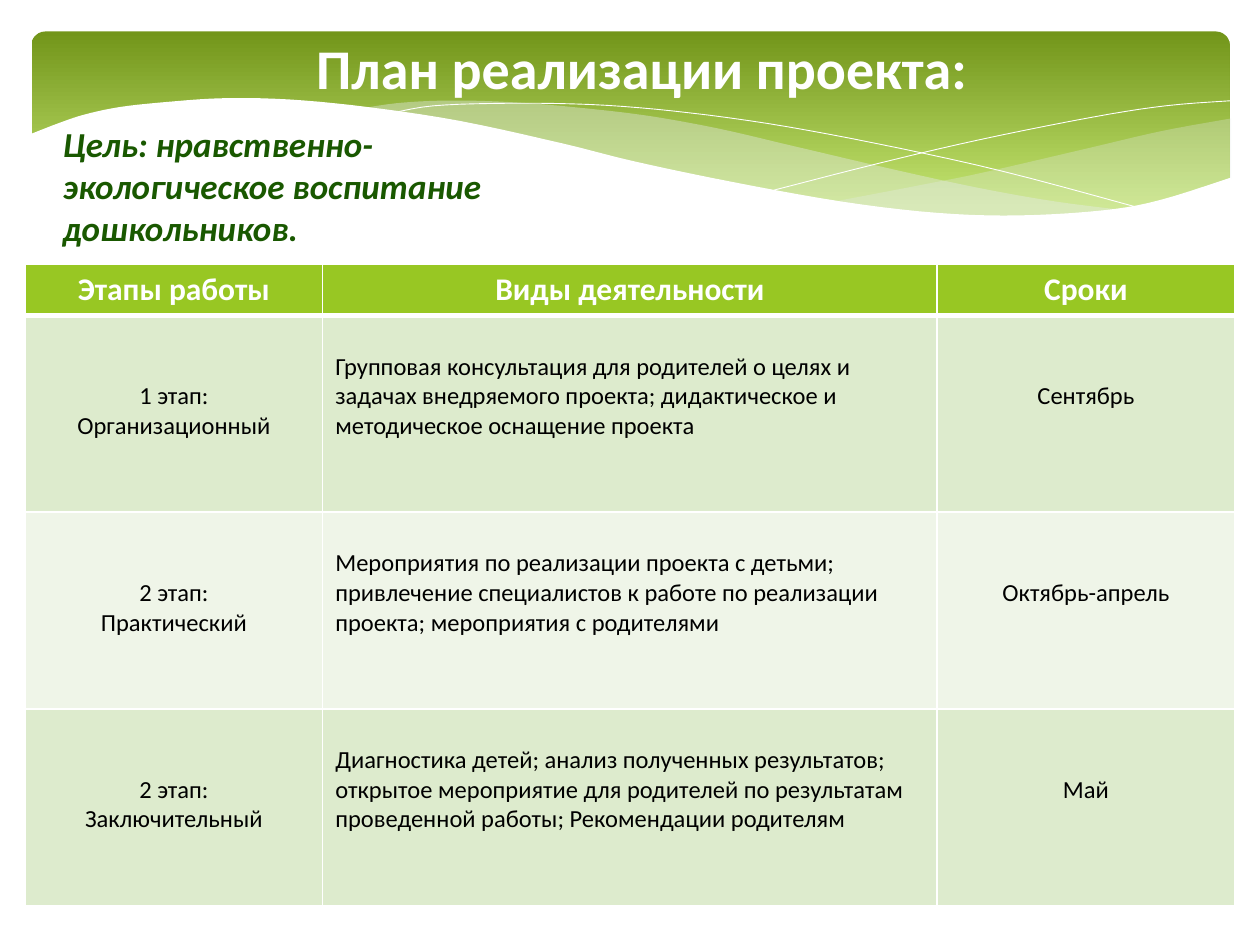
from dataclasses import dataclass

from lxml.etree import SubElement
from pptx import Presentation
from pptx.dml.color import RGBColor
from pptx.enum.shapes import MSO_SHAPE as Shape
from pptx.enum.text import MSO_ANCHOR as Anchor, PP_ALIGN as Align
from pptx.oxml.ns import qn
from pptx.util import Inches, Pt

FONT = "Calibri"
COLORS = {
    "white": "FFFFFF", "black": "000000", "goal": "195800",
    "band_top": "72951A", "band_low": "C5E672", "haze": "E7ECED",
    "header": "98C723", "odd": "DDEBCD", "even": "EFF5E8",
}
UNIT = Inches(0.1)  # the slide is a grid of 100 columns and 75 rows
BODY_LINE = 2.37    # grid rows taken by one line of 14 pt text

# Wave edges, as (column, row) knots inside the heading region
RIGHT_HAZE = [
    [(97.7, 9.4), (92.2, 10.4), (86.2, 11.8), (78, 13.7), (73, 14.7), (66.2, 16)],
    [(66.2, 16), (71.9, 16.7), (77, 17.1), (82.5, 17.2), (88.2, 16.8),
     (92.9, 15.8), (97.7, 14.2)],
]
LEFT_HAZE = [
    [(89.4, 16.7), (83.8, 16), (77.6, 14.9), (70.7, 13.4), (63, 11.6),
     (57, 10.2), (51.5, 9.2), (46.5, 8.6), (42, 8.2), (38, 8), (34.5, 8),
     (31.4, 8.2), (28.7, 8.6)],
    [(28.7, 8.6), (34.3, 9.4), (40.5, 10.6), (45, 11.6), (53, 13.5), (60.2, 15),
     (66.6, 16.1), (72.3, 16.8), (77.4, 17.2), (81.9, 17.3), (85.9, 17.1),
     (89.4, 16.7)],
]
WHITE_WAVE = [
    [(97.7, 14.1), (92, 15.9), (87.5, 16.7), (80.9, 17.1), (74.4, 16.9),
     (66.8, 16), (57.9, 14.4), (50.3, 12.8), (44.7, 11.4), (36.5, 9.6),
     (29.2, 8.5), (23, 7.9), (17.7, 7.8), (13.2, 8.1), (9.5, 8.5), (6.7, 9.1),
     (4.6, 9.8), (2.3, 10.7)],
    [(2.3, 22.4), (97.7, 22.4)],
]
FALLING_LINE = [(31, 9), (34.4, 8.4), (40.2, 8.2), (46.9, 8.3), (53.3, 8.8),
                (60.9, 9.8), (69.6, 11.4), (79.6, 13.6), (90.8, 16.6)]
RISING_LINE = [(61.4, 15.1), (69.6, 13), (77.7, 11.1), (86.7, 9.3),
               (92.5, 8.4), (97.6, 8)]

HEADER = ["Этапы работы", "Виды деятельности", "Сроки"]
STAGES = [
    ["1 этап:\nОрганизационный",
     "Групповая консультация для родителей о целях и задачах внедряемого проекта; "
     "дидактическое и методическое оснащение проекта", "Сентябрь"],
    ["2 этап:\nПрактический",
     "Мероприятия по реализации проекта с детьми; привлечение специалистов к работе "
     "по реализации проекта; мероприятия с родителями", "Октябрь-апрель"],
    ["2 этап:\nЗаключительный",
     "Диагностика детей; анализ полученных результатов; открытое мероприятие для "
     "родителей по результатам проведенной работы; Рекомендации родителям", "Май"],
]


@dataclass
class Box:
    """A region in grid columns and rows."""
    x: float
    y: float
    w: float
    h: float

    def inner(self, x, y, w, h):
        return Box(self.x + x, self.y + y, w, h)

    def emu(self):
        return [grid(v) for v in (self.x, self.y, self.w, self.h)]


def grid(n):
    return int(round(n * UNIT))


def rgb(name):
    return RGBColor.from_string(COLORS[name])


def smooth(knots, steps=5):
    """Points of a Catmull-Rom curve through the knots."""
    if len(knots) < 3:
        return knots
    padded = [knots[0], *knots, knots[-1]]
    points = [knots[0]]
    for a, b, c, d in zip(padded, padded[1:], padded[2:], padded[3:]):
        for t in (i / steps for i in range(1, steps + 1)):
            points.append(tuple(
                (2 * q + (r - p) * t + (2 * p - 5 * q + 4 * r - s) * t ** 2
                 + (3 * q - p - 3 * r + s) * t ** 3) / 2
                for p, q, r, s in zip(a, b, c, d)))
    return points


def add_wave(s, box, edges, fill=None, opacity=100):
    """A filled wave, or a thin white curve when no fill is given."""
    points = [(grid(box.x + x), grid(box.y + y))
              for edge in edges for x, y in smooth(edge)]
    builder = s.shapes.build_freeform(*points[0])
    builder.add_line_segments(points[1:], close=fill is not None)
    sp = builder.convert_to_shape()
    sp.shadow.inherit = False
    if fill is None:
        sp.fill.background()
        sp.line.color.rgb = rgb("white")
        sp.line.width = Pt(0.5)
        return
    sp.line.fill.background()
    sp.fill.solid()
    sp.fill.fore_color.rgb = rgb(fill)
    if opacity < 100:
        color = sp.element.spPr.find(f"{qn('a:solidFill')}/{qn('a:srgbClr')}")
        SubElement(color, qn("a:alpha"), val=str(opacity * 1000))


def format_text(tf, size, color, bold=False, italic=False, align=Align.LEFT):
    for p in tf.paragraphs:
        p.alignment = align
        for r in p.runs:
            r.font.name, r.font.size = FONT, Pt(size)
            r.font.bold, r.font.italic = bold, italic
            r.font.color.rgb = rgb(color)


def add_banner(s, box):
    band = s.shapes.add_shape(Shape.ROUNDED_RECTANGLE,
                              *box.inner(2.5, 2.5, 95.1, 15.6).emu())
    band.adjustments[0] = 0.07
    band.shadow.inherit = False
    band.line.fill.background()
    band.fill.gradient()
    band.fill.gradient_angle = 270
    for stop, position, name in zip(band.fill.gradient_stops, (0, 0.9),
                                    ("band_top", "band_low")):
        stop.position = position
        stop.color.rgb = rgb(name)
    add_wave(s, box, RIGHT_HAZE, "haze", 29)
    add_wave(s, box, LEFT_HAZE, "haze", 40)
    add_wave(s, box, [FALLING_LINE])
    add_wave(s, box, [RISING_LINE])
    add_wave(s, box, WHITE_WAVE, "white")


def add_goal(s, box):
    tf = s.shapes.add_textbox(*box.emu()).text_frame
    tf.word_wrap = True
    tf.margin_left = grid(2.2)
    tf.text = "Цель: нравственно-экологическое воспитание дошкольников."
    format_text(tf, 20, "goal", bold=True, italic=True)


def place_title(s, box):
    title = s.shapes.title
    title.left, title.top, title.width, title.height = box.emu()
    title.element.getparent().append(title.element)  # in front of the banner
    tf = title.text_frame
    tf.text = "План реализации проекта:"
    tf.vertical_anchor = Anchor.BOTTOM
    format_text(tf, 32, "white", bold=True)


def format_cell(cell, fill, bottom_width):
    props = cell._tc.get_or_add_tcPr()
    for side in "LRTB":
        width = bottom_width if side == "B" else 1
        line = SubElement(props, qn(f"a:ln{side}"), w=str(Pt(width)))
        color = SubElement(line, qn("a:solidFill"))
        SubElement(color, qn("a:srgbClr"), val=COLORS["white"])
    cell.fill.solid()
    cell.fill.fore_color.rgb = rgb(fill)


def add_plan(s, box):
    rows = [HEADER, *STAGES]
    header_h = 3.9
    table = s.shapes.add_table(len(rows), len(HEADER), *box.emu()).table
    for column, share in zip(table.columns, (0.246, 0.508, 0.246)):
        column.width = grid(box.w * share)
    for i, texts in enumerate(rows):
        stage_h = (box.h - header_h) / len(STAGES)
        table.rows[i].height = grid(stage_h if i else header_h)
        for j, text in enumerate(texts):
            cell = table.cell(i, j)
            cell.text_frame.text = text
            if i == 0:
                format_cell(cell, "header", 3)
                format_text(cell.text_frame, 18, "white", bold=True, align=Align.CENTER)
                continue
            format_cell(cell, "odd" if i % 2 else "even", 1)
            lines_above = 1 if j == 1 else 2
            cell.margin_top = grid(0.5 + lines_above * BODY_LINE)
            format_text(cell.text_frame, 14, "black",
                        align=Align.LEFT if j == 1 else Align.CENTER)


def main():
    prs = Presentation()
    prs.slide_width, prs.slide_height = grid(100), grid(75)
    s = prs.slides.add_slide(prs.slide_layouts[5])
    add_banner(s, Box(0, 0, 100, 22.4))
    add_goal(s, Box(2.8, 9.2, 36.7, 20.8))
    place_title(s, Box(24.1, 0, 76.2, 8.5))
    add_plan(s, Box(2, 21, 96, 50.7))
    prs.save("out.pptx")


if __name__ == "__main__":
    main()
